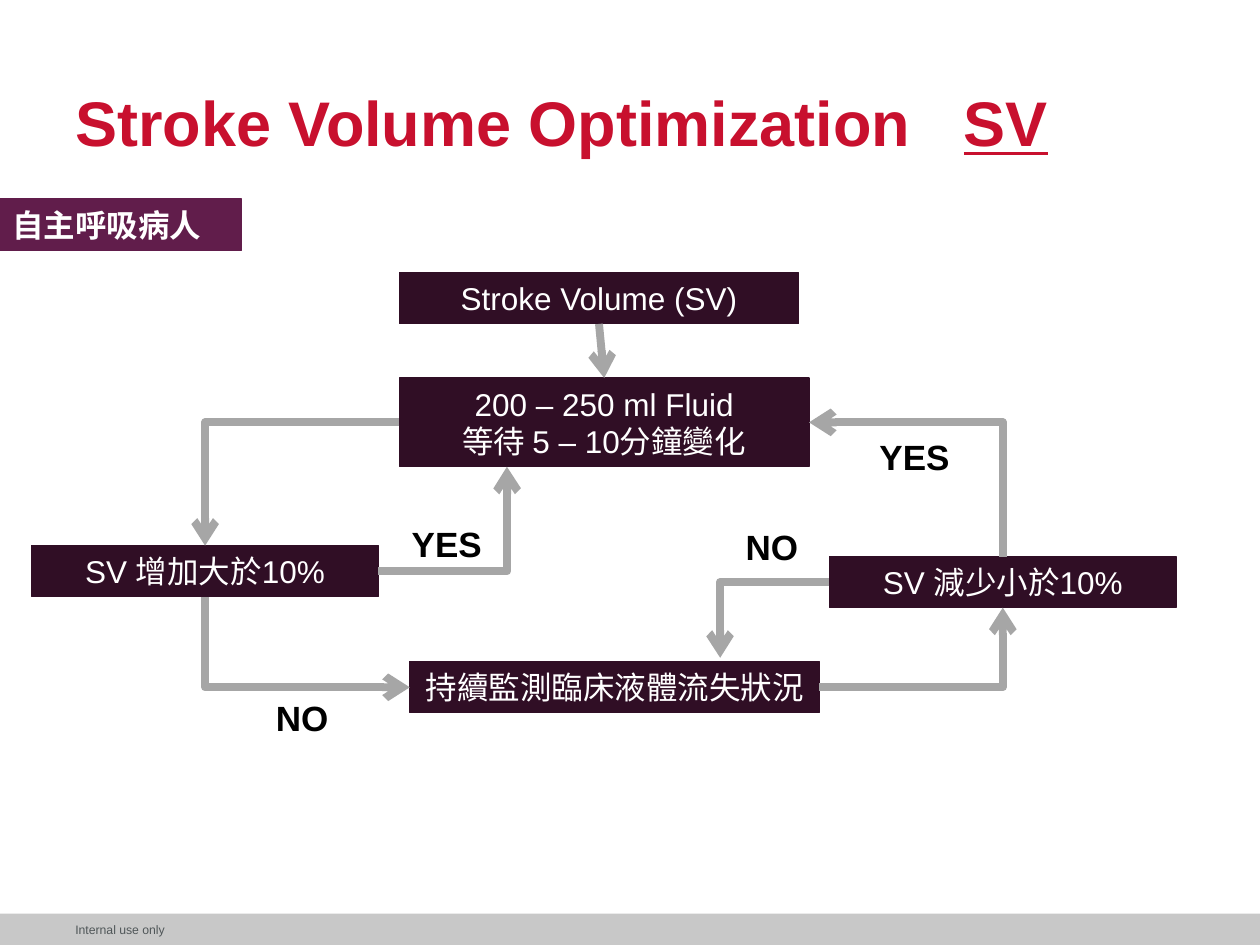
"""Build a stroke volume optimization flowchart slide."""
from lxml import etree
from pptx import Presentation
from pptx.dml.color import RGBColor
from pptx.enum.shapes import MSO_CONNECTOR, MSO_SHAPE
from pptx.enum.text import MSO_ANCHOR, PP_ALIGN
from pptx.oxml.ns import qn
from pptx.util import Cm, Pt

RECTANGLE = MSO_SHAPE.RECTANGLE
STRAIGHT, ELBOW = MSO_CONNECTOR.STRAIGHT, MSO_CONNECTOR.ELBOW
MIDDLE = MSO_ANCHOR.MIDDLE
LEFT, CENTER = PP_ALIGN.LEFT, PP_ALIGN.CENTER
TOP_SIDE, LEFT_SIDE, BOTTOM_SIDE, RIGHT_SIDE = range(4)
COLORS = {
    "title": "C8102E",
    "tag": "611D4B",
    "step": "300E25",
    "arrow": "A6A6A6",
    "footer": "C8C8C8",
    "footer_text": "505759",
    "white": "FFFFFF",
    "black": "000000",
}


class FlowSlide:
    def __init__(self, slide, font="Arial"):
        self.slide = slide
        self.font = font

    def color(self, name):
        return RGBColor.from_string(COLORS[name])

    def add_run(self, paragraph, text, size, color, bold=False, underline=None):
        run = paragraph.add_run()
        run.text = text
        run.font.name = self.font
        run.font.size = Pt(size)
        run.font.bold = bold
        run.font.underline = underline
        run.font.color.rgb = self.color(color)

    def rectangle(self, left, top, width, height, color, lines=(), line_width=0,
                  bold=False, align=CENTER):
        shape = self.slide.shapes.add_shape(
            RECTANGLE, Cm(left), Cm(top), Cm(width), Cm(height))
        shape.shadow.inherit = False
        shape.fill.solid()
        shape.fill.fore_color.rgb = self.color(color)
        if line_width:
            shape.line.color.rgb = self.color(color)
            shape.line.width = Pt(line_width)
        else:
            shape.line.fill.background()
        frame = shape.text_frame
        frame.word_wrap = True
        for index, text in enumerate(lines):
            paragraph = frame.add_paragraph() if index else frame.paragraphs[0]
            paragraph.alignment = align
            self.add_run(paragraph, text, 18, "white", bold)
        return shape

    def step(self, left, top, width, *lines, height=1.03):
        return self.rectangle(left, top, width, height, "step", lines, 0.75)

    def text_box(self, left, top, width, height, flush=False):
        frame = self.slide.shapes.add_textbox(
            Cm(left), Cm(top), Cm(width), Cm(height)).text_frame
        frame.word_wrap = True
        if flush:
            frame.margin_left = frame.margin_right = 0
            frame.margin_top = frame.margin_bottom = 0
            frame.vertical_anchor = MIDDLE
        return frame.paragraphs[0]

    def title(self, text, underlined):
        paragraph = self.text_box(1.52, 1.27, 22.35, 2.54, flush=True)
        paragraph.line_spacing = 0.9
        tabs = etree.SubElement(paragraph._p.get_or_add_pPr(), qn("a:tabLst"))
        etree.SubElement(tabs, qn("a:tab"), pos=str(Cm(17.91)), algn="l")
        self.add_run(paragraph, text + "\t", 36, "title", True)
        self.add_run(paragraph, underlined, 36, "title", True, True)

    def label(self, left, top, width, text):
        self.add_run(self.text_box(left, top, width, 1.11), text, 20, "black", True)

    def arrow(self, kind, start, start_side, end=None, end_side=None, point=(0, 0)):
        connector = self.slide.shapes.add_connector(
            kind, 0, 0, Cm(point[0]), Cm(point[1]))
        connector.begin_connect(start, start_side)
        if end is not None:
            connector.end_connect(end, end_side)
        connector.line.color.rgb = self.color("arrow")
        connector.line.width = Pt(4.5)
        etree.SubElement(connector.line._get_or_add_ln(), qn("a:tailEnd"), type="arrow")
        etree.SubElement(connector._element.spPr, qn("a:effectLst"))
        return connector

    def corner(self, start, start_side, end, end_side):
        connector = self.arrow(ELBOW, start, start_side, end, end_side)
        properties = connector._element.spPr
        properties.find(qn("a:prstGeom")).set("prst", "bentConnector2")
        if start_side in (TOP_SIDE, BOTTOM_SIDE):
            goes_down = connector.end_y > connector.begin_y
            goes_left = connector.end_x < connector.begin_x
            left, top = connector.left, connector.top
            width, height = connector.width, connector.height
            connector.left = left + (width - height) // 2
            connector.top = top + (height - width) // 2
            connector.width, connector.height = height, width
            properties.xfrm.set("rot", "16200000")
            properties.xfrm.set("flipH", str(int(goes_down)))
            properties.xfrm.set("flipV", str(int(goes_left)))

    def corner_to_point(self, start, start_side, left, top):
        connector = self.arrow(ELBOW, start, start_side, point=(left, top))
        geometry = connector._element.spPr.find(qn("a:prstGeom"))
        adjustments = geometry.find(qn("a:avLst"))
        if adjustments is None:
            adjustments = etree.SubElement(geometry, qn("a:avLst"))
        etree.SubElement(adjustments, qn("a:gd"), name="adj1", fmla="val 100200")


def main():
    presentation = Presentation()
    presentation.slide_width, presentation.slide_height = Cm(25.4), Cm(19.05)
    flow = FlowSlide(presentation.slides.add_slide(presentation.slide_layouts[6]))

    flow.rectangle(0, 18.42, 25.4, 0.63, "footer")
    footer = flow.text_box(1.52, 18.42, 2.54, 0.63, flush=True)
    flow.add_run(footer, "Internal use only", 7, "footer_text")
    flow.title("Stroke Volume Optimization", "SV")
    flow.rectangle(0, 4.02, 4.87, 1.03, "tag", ["自主呼吸病人"], 1, True, LEFT)

    volume = flow.step(8.05, 5.5, 8.05, "Stroke Volume (SV)")
    fluid = flow.step(8.05, 7.62, 8.26, "200 – 250 ml Fluid", "等待 5 – 10分鐘變化",
                      height=1.79)
    increase = flow.step(0.64, 11, 6.99, "SV 增加大於10%")
    decrease = flow.step(16.72, 11.22, 6.99, "SV 減少小於10%")
    monitor = flow.step(8.26, 13.34, 8.26, "持續監測臨床液體流失狀況")

    flow.arrow(STRAIGHT, volume, BOTTOM_SIDE, fluid, TOP_SIDE)
    flow.corner(decrease, TOP_SIDE, fluid, RIGHT_SIDE)
    flow.corner(fluid, LEFT_SIDE, increase, TOP_SIDE)
    flow.corner(increase, BOTTOM_SIDE, monitor, LEFT_SIDE)
    flow.corner(monitor, RIGHT_SIDE, decrease, BOTTOM_SIDE)
    flow.corner_to_point(decrease, LEFT_SIDE, 14.52, 13.26)
    flow.corner_to_point(increase, RIGHT_SIDE, 10.22, 9.41)

    for left, top, width, text in (
        (17.48, 8.66, 2.11, "YES"),
        (8.05, 10.41, 2.11, "YES"),
        (5.31, 13.92, 1.7, "NO"),
        (14.78, 10.46, 1.7, "NO"),
    ):
        flow.label(left, top, width, text)

    presentation.save("out.pptx")


if __name__ == "__main__":
    main()
